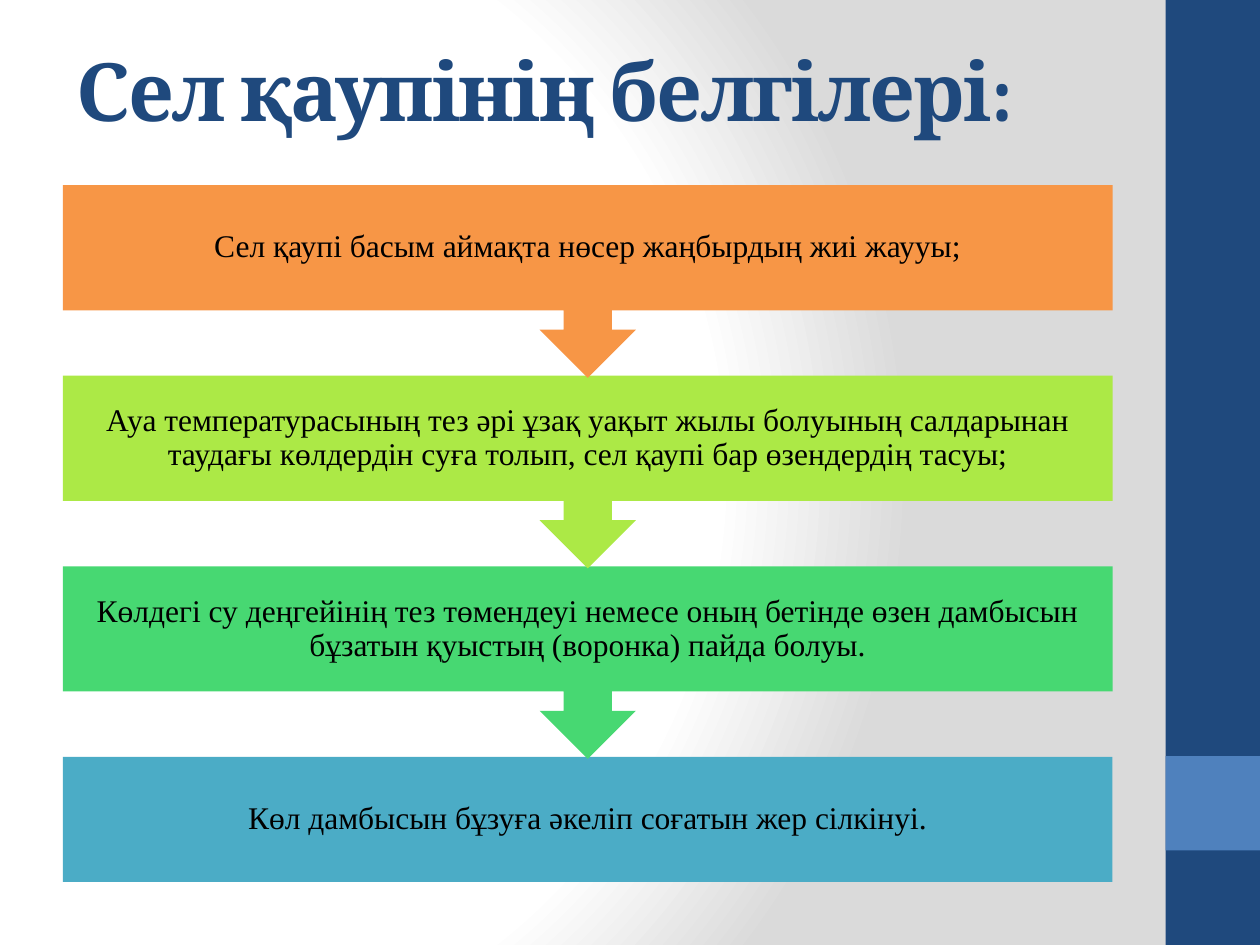
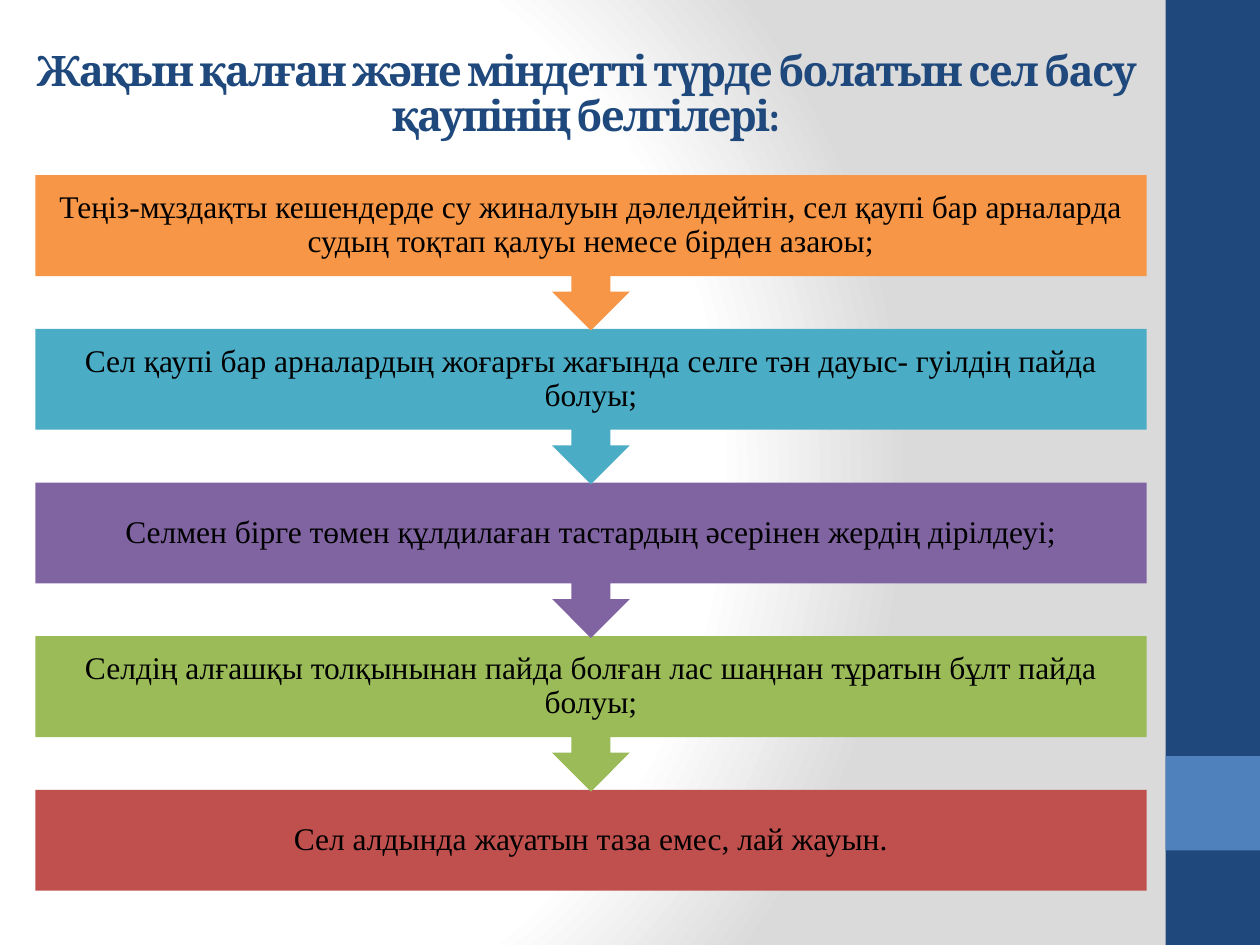
import pptx
import pptx.util
import pptx.dml.color
import pptx.enum.shapes
import pptx.enum.text
import pptx.oxml

Inches = pptx.util.Inches
Pt = pptx.util.Pt
RGBColor = pptx.dml.color.RGBColor
Preset = pptx.enum.shapes.MSO_SHAPE
Align = pptx.enum.text.PP_ALIGN
MIDDLE = pptx.enum.text.MSO_ANCHOR.MIDDLE

NAVY = RGBColor(0x1F, 0x49, 0x7D)
BLUE = RGBColor(0x4F, 0x81, 0xBD)
ORANGE = RGBColor(0xF7, 0x96, 0x46)
LIME = RGBColor(0xAC, 0xE9, 0x46)
GREEN = RGBColor(0x47, 0xD8, 0x72)
TEAL = RGBColor(0x4B, 0xAC, 0xC6)
PURPLE = RGBColor(0x80, 0x64, 0xA2)
OLIVE = RGBColor(0x9B, 0xBB, 0x59)
RED = RGBColor(0xC0, 0x50, 0x4D)
BLACK = RGBColor(0, 0, 0)

SLIDE_W, SLIDE_H = 10, 7.5
SIDEBAR_W = 0.75
STEP_PITCH = 1.523
CALLOUT_RATIO = 1.54

TITLE_FONT = {"name": "Cambria", "bold": True}
STEP_FONT = {"name": "Times New Roman", "size": Pt(18)}
STEP_FRAME = {"word_wrap": True, "vertical_anchor": MIDDLE}
STEP_FRAME.update({f"margin_{side}": Inches(0.14)
                   for side in ("left", "top", "right", "bottom")})

GRADIENT = """<a:gradFill xmlns:a="http://schemas.openxmlformats.org/drawingml/2006/main"
 rotWithShape="1"><a:gsLst>
<a:gs pos="0"><a:srgbClr val="FFFFFF"/></a:gs>
<a:gs pos="75000"><a:srgbClr val="FFFFFF"/></a:gs>
<a:gs pos="100000"><a:srgbClr val="DADADA"/></a:gs>
</a:gsLst><a:path path="circle">
<a:fillToRect l="20000" t="50000" r="100000" b="50000"/></a:path></a:gradFill>"""

SLIDES = [
    {
        "title": ("Сел қаупінің белгілері:", (0.51, 0.13, 8.33, 1.25), 46, Align.LEFT),
        "box": (0.5, 1.47, 8.33, 5.53),
        "steps": [
            (ORANGE, "Сел қаупі басым аймақта нөсер жаңбырдың жиі жаууы;"),
            (LIME, "Ауа температурасының тез әрі ұзақ уақыт жылы болуының салдарынан "
                   "таудағы көлдердін суға толып, сел қаупі бар өзендердің тасуы;"),
            (GREEN, "Көлдегі су деңгейінің тез төмендеуі немесе оның бетінде өзен "
                    "дамбысын бұзатын қуыстың (воронка) пайда болуы."),
            (TEAL, "Көл дамбысын бұзуға әкеліп соғатын жер сілкінуі."),
        ],
    },
    {
        "title": ("Жақын қалған және міндетті түрде болатын сел басу қаупінің белгілері:",
                  (0.12, 0.13, 9.06, 1.25), 24, Align.CENTER),
        "box": (0.28, 1.39, 8.82, 5.68),
        "steps": [
            (ORANGE, "Теңіз-мұздақты кешендерде су жиналуын дәлелдейтін, сел қаупі бар "
                     "арналарда судың тоқтап қалуы немесе бірден азаюы;"),
            (TEAL, "Сел қаупі бар арналардың жоғарғы жағында селге тән дауыс- гуілдің "
                   "пайда болуы;"),
            (PURPLE, "Селмен бірге төмен құлдилаған тастардың әсерінен жердің дірілдеуі;"),
            (OLIVE, "Селдің алғашқы толқынынан пайда болған лас шаңнан тұратын бұлт "
                    "пайда болуы;"),
            (RED, "Сел алдында жауатын таза емес, лай жауын."),
        ],
    },
]


def apply_format(target, values):
    """Set each named attribute of the target."""
    for attribute, value in values.items():
        setattr(target, attribute, value)


def add_block(slide, preset, box, color):
    """Add a flat shape in one colour."""
    block = slide.shapes.add_shape(preset, *map(Inches, box))
    block.shadow.inherit = False
    block.fill.solid()
    block.fill.fore_color.rgb = color
    block.line.fill.background()
    return block


def write_text(frame, text, font, color, align):
    """Write one paragraph with tight line spacing."""
    paragraph = frame.paragraphs[0]
    apply_format(paragraph, {"alignment": align, "line_spacing": 0.9})
    run = paragraph.add_run()
    run.text = text
    apply_format(run.font, font)
    run.font.color.rgb = color
    return run


def set_background(master):
    """Give every slide the radial white to grey gradient."""
    fill = master.background.fill
    fill.gradient()
    gradient = master.element.cSld.bg.bgPr.find(pptx.oxml.ns.qn("a:gradFill"))
    gradient.getparent().replace(gradient, pptx.oxml.parse_xml(GRADIENT))


def add_sidebar(slide):
    """Add the navy band at the right edge with its lighter square."""
    left = SLIDE_W - SIDEBAR_W
    add_block(slide, Preset.RECTANGLE, (left, 0, SIDEBAR_W, SLIDE_H), NAVY)
    add_block(slide, Preset.RECTANGLE, (left, 6, SIDEBAR_W, SIDEBAR_W), BLUE)


def add_title(slide, text, box, size, align):
    """Add the slide title, centred vertically in its box."""
    title = slide.shapes.add_textbox(*map(Inches, box))
    apply_format(title.text_frame, {"word_wrap": True, "vertical_anchor": MIDDLE})
    run = write_text(title.text_frame, text, {**TITLE_FONT, "size": Pt(size)}, NAVY, align)
    run.font._element.set("spc", "-100")


def add_step_flow(slide, box, steps):
    """Stack the steps in the box, each but the last pointing to the next."""
    left, top, width, height = box
    last = len(steps) - 1
    body = height / (last * STEP_PITCH + 1)
    for index in range(last, -1, -1):
        color, text = steps[index]
        is_last = index == last
        preset = Preset.RECTANGLE if is_last else Preset.DOWN_ARROW_CALLOUT
        step_height = body if is_last else body * CALLOUT_RATIO
        step_top = top + index * body * STEP_PITCH
        step = add_block(slide, preset, (left, step_top, width, step_height), color)
        if not is_last:
            step.adjustments[3] = 1 / CALLOUT_RATIO
        apply_format(step.text_frame, STEP_FRAME)
        write_text(step.text_frame, text, STEP_FONT, BLACK, Align.CENTER)


def main():
    """Build and save the slides."""
    deck = pptx.Presentation()
    apply_format(deck, {"slide_width": Inches(SLIDE_W), "slide_height": Inches(SLIDE_H)})
    set_background(deck.slide_master)
    for content in SLIDES:
        slide = deck.slides.add_slide(deck.slide_layouts[6])
        add_sidebar(slide)
        add_title(slide, *content["title"])
        add_step_flow(slide, content["box"], content["steps"])
    deck.save("out.pptx")


if __name__ == "__main__":
    main()
